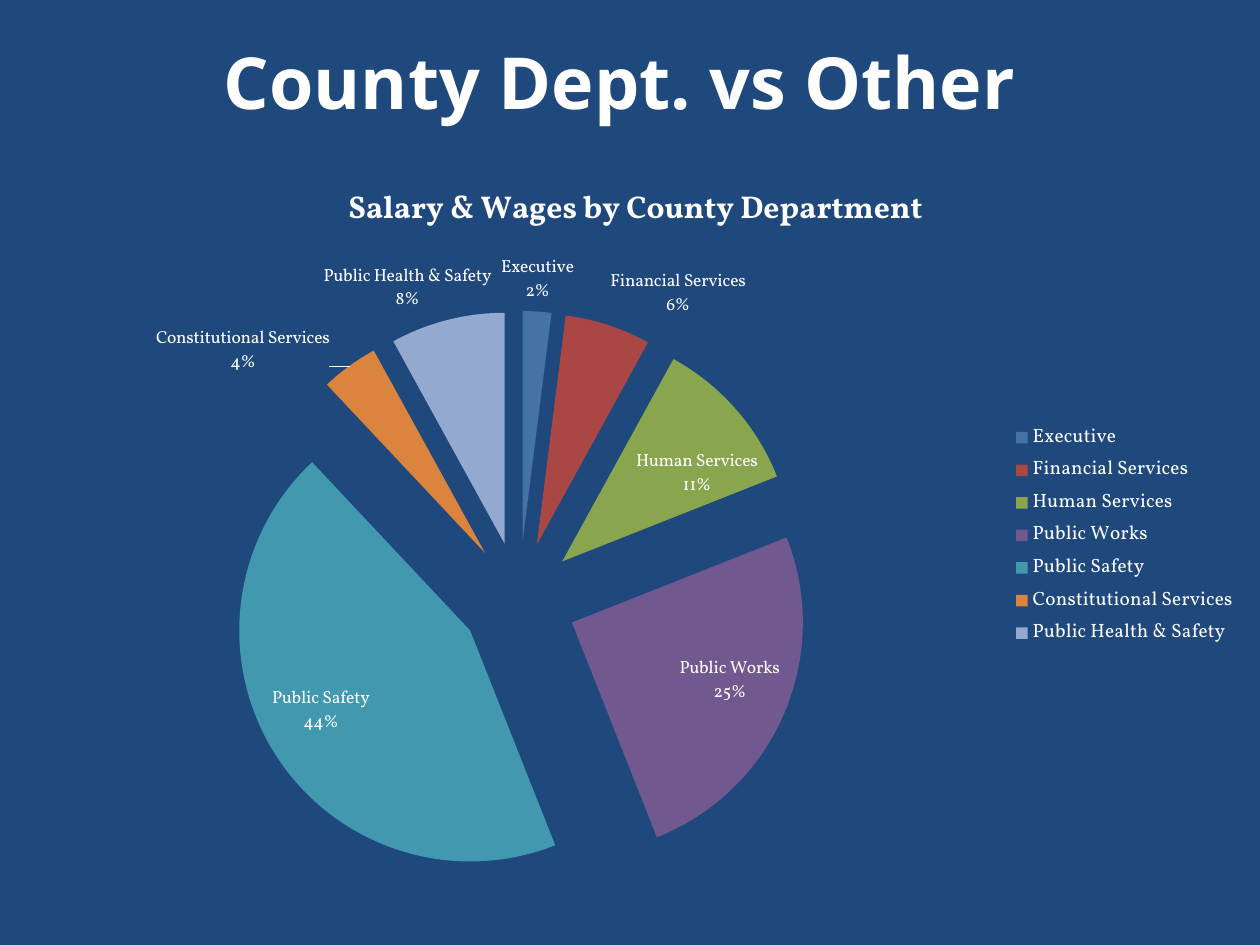
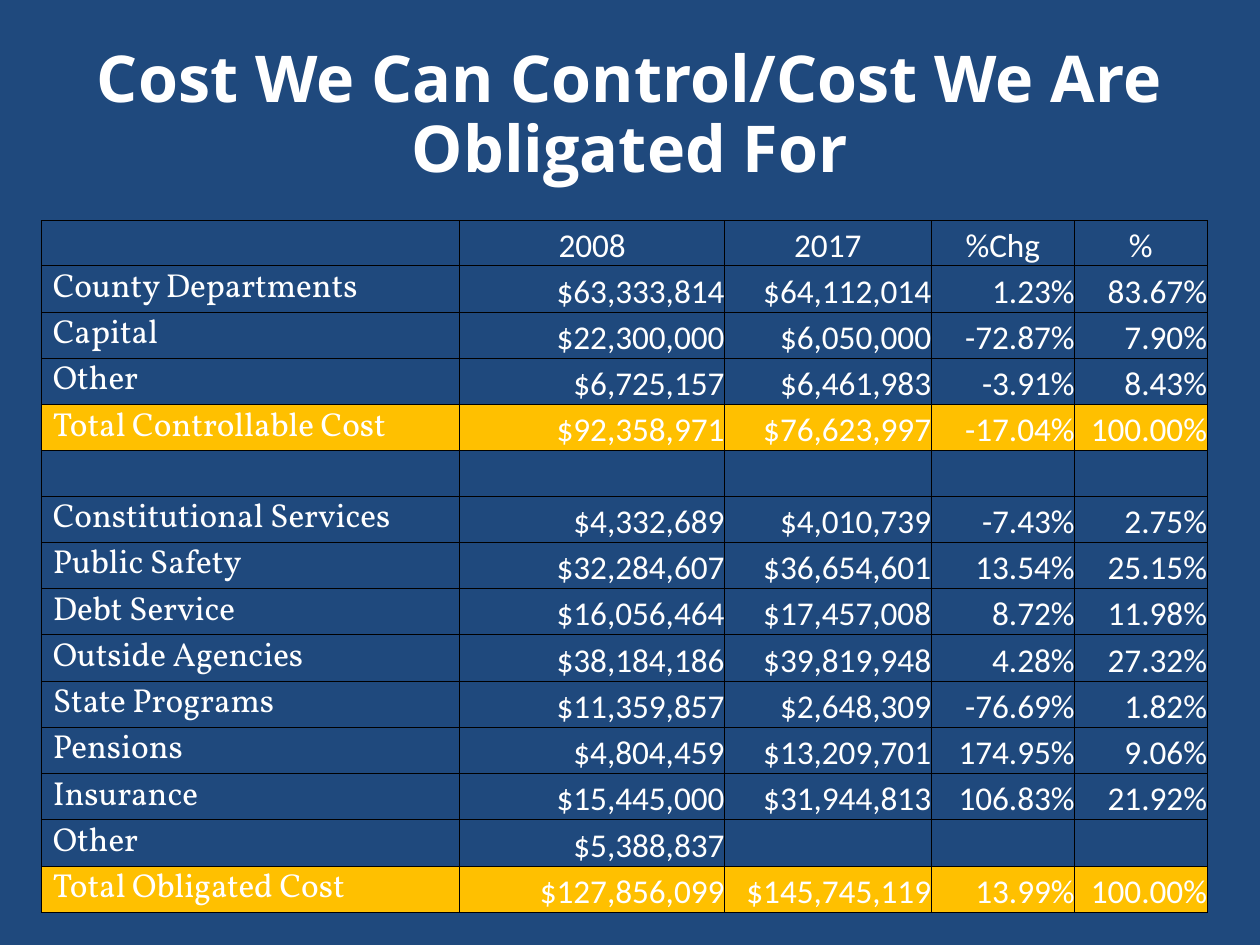
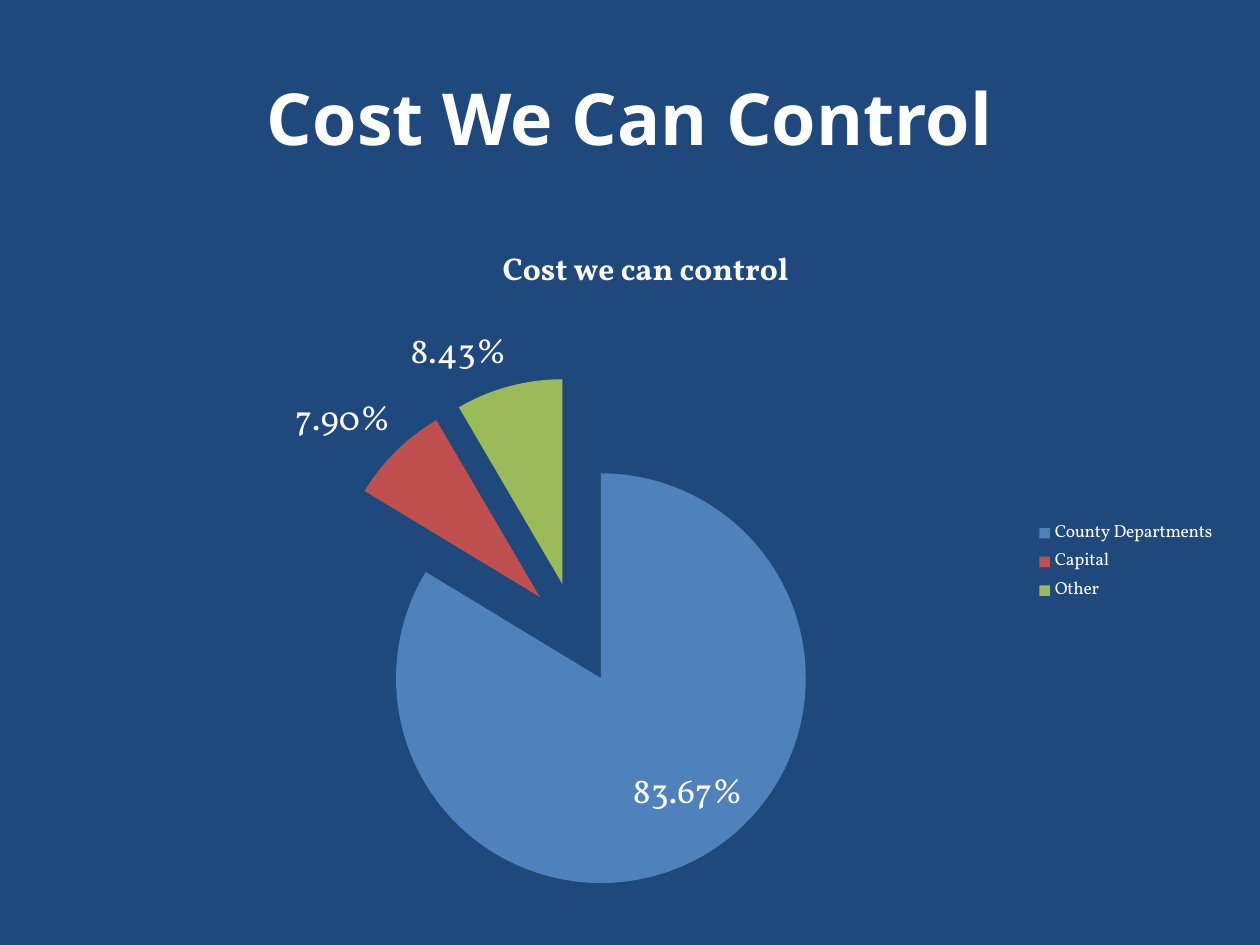
"""Build three slides on county department costs: two exploded pies and a table."""
from dataclasses import dataclass

from lxml import etree
from pptx import Presentation
from pptx.chart.data import CategoryChartData
from pptx.dml.color import RGBColor
from pptx.enum.chart import XL_CHART_TYPE, XL_LABEL_POSITION, XL_LEGEND_POSITION
from pptx.enum.dml import MSO_LINE
from pptx.enum.text import MSO_ANCHOR, MSO_AUTO_SIZE, PP_ALIGN
from pptx.oxml import parse_xml
from pptx.oxml.ns import nsdecls, qn
from pptx.util import Pt

PIE = XL_CHART_TYPE.PIE
BEST_FIT = XL_LABEL_POSITION.BEST_FIT
LEGEND_RIGHT = XL_LEGEND_POSITION.RIGHT
SOLID = MSO_LINE.SOLID
MIDDLE, BOTTOM = MSO_ANCHOR.MIDDLE, MSO_ANCHOR.BOTTOM
LEFT, CENTER, RIGHT = PP_ALIGN.LEFT, PP_ALIGN.CENTER, PP_ALIGN.RIGHT
NO_AUTOFIT = MSO_AUTO_SIZE.NONE

EMU_PER_PX = 9144
TITLE_ONLY = 5
EXPLOSION = 25

NAVY = RGBColor(0x1F, 0x49, 0x7D)
WHITE = RGBColor(0xFF, 0xFF, 0xFF)
GOLD = RGBColor(0xFF, 0xC0, 0x00)
BORDER_COLOR = RGBColor(0x00, 0x00, 0x00)
DEPARTMENT_COLORS = (
    RGBColor(0x45, 0x72, 0xA7),
    RGBColor(0xAA, 0x46, 0x43),
    RGBColor(0x89, 0xA5, 0x4E),
    RGBColor(0x71, 0x58, 0x8F),
    RGBColor(0x41, 0x98, 0xAF),
    RGBColor(0xDB, 0x84, 0x3D),
    RGBColor(0x93, 0xA9, 0xCF),
)
CONTROL_COLORS = (
    RGBColor(0x4F, 0x81, 0xBD),
    RGBColor(0xC0, 0x50, 0x4D),
    RGBColor(0x9B, 0xBB, 0x59),
)

TITLE_FONT = "Open Sans"
LABEL_FONT = "Vollkorn"
NUMBER_FONT = "Calibri"


@dataclass(frozen=True)
class Box:
    left: int
    top: int
    width: int
    height: int

    def emu(self) -> tuple[int, int, int, int]:
        return px(self.left), px(self.top), px(self.width), px(self.height)


@dataclass(frozen=True)
class PieSpec:
    title: str
    box: Box
    plot: tuple[float, float, float, float]
    slices: dict[str, float]
    colors: tuple[RGBColor, ...]
    number_format: str
    percent_and_name: bool
    label_size: int
    legend_size: int


TITLE_BOX = Box(50, 30, 900, 125)
HIGH_TITLE_BOX = Box(42, 2, 900, 125)

DEPARTMENT_PIE = PieSpec(
    title="Salary & Wages by County Department",
    box=Box(17, 125, 975, 600),
    plot=(0.17, 0.2, 0.47, 0.77),
    slices={
        "Executive": 2,
        "Financial Services": 6,
        "Human Services": 11,
        "Public Works": 25,
        "Public Safety": 44,
        "Constitutional Services": 4,
        "Public Health & Safety": 8,
    },
    colors=DEPARTMENT_COLORS,
    number_format="0%",
    percent_and_name=True,
    label_size=10,
    legend_size=11,
)
CONTROL_PIE = PieSpec(
    title="Cost we can control",
    box=Box(50, 175, 925, 542),
    plot=(0.22, 0.23, 0.44, 0.75),
    slices={"County Departments": 0.8367, "Capital": 0.079, "Other": 0.0843},
    colors=CONTROL_COLORS,
    number_format="0.00%",
    percent_and_name=False,
    label_size=20,
    legend_size=10,
)

COLUMN_WIDTHS = (332, 210, 164, 114, 105)
ROW_HEIGHT = 36
COST_ROWS = (
    ("", "2008", "2017", "%Chg", "%"),
    ("County Departments", "$63,333,814", "$64,112,014", "1.23%", "83.67%"),
    ("Capital", "$22,300,000", "$6,050,000", "-72.87%", "7.90%"),
    ("Other", "$6,725,157", "$6,461,983", "-3.91%", "8.43%"),
    ("Total Controllable Cost", "$92,358,971", "$76,623,997", "-17.04%", "100.00%"),
    ("", "", "", "", ""),
    ("Constitutional Services", "$4,332,689", "$4,010,739", "-7.43%", "2.75%"),
    ("Public Safety", "$32,284,607", "$36,654,601", "13.54%", "25.15%"),
    ("Debt Service", "$16,056,464", "$17,457,008", "8.72%", "11.98%"),
    ("Outside Agencies", "$38,184,186", "$39,819,948", "4.28%", "27.32%"),
    ("State Programs", "$11,359,857", "$2,648,309", "-76.69%", "1.82%"),
    ("Pensions", "$4,804,459", "$13,209,701", "174.95%", "9.06%"),
    ("Insurance", "$15,445,000", "$31,944,813", "106.83%", "21.92%"),
    ("Other", "$5,388,837", "", "", ""),
    ("Total Obligated Cost", "$127,856,099", "$145,745,119", "13.99%", "100.00%"),
)


def px(length: int) -> int:
    return length * EMU_PER_PX


def style_font(font, name: str, size: float, bold: bool = False) -> None:
    font.name = name
    font.size = Pt(size)
    font.bold = bold
    font.color.rgb = WHITE


def add_titled_slide(presentation, text: str, box: Box = TITLE_BOX,
                     size: float = 41, line_spacing: float = 1.0):
    slide = presentation.slides.add_slide(presentation.slide_layouts[TITLE_ONLY])
    title = slide.shapes.title
    title.left, title.top, title.width, title.height = box.emu()
    text_frame = title.text_frame
    text_frame.text = text
    text_frame.auto_size = NO_AUTOFIT
    text_frame.vertical_anchor = MIDDLE
    paragraph = text_frame.paragraphs[0]
    paragraph.alignment = CENTER
    paragraph.line_spacing = line_spacing
    style_font(paragraph.runs[0].font, TITLE_FONT, size, bold=True)
    return slide


def place_plot(chart, plot: tuple[float, float, float, float]) -> None:
    plot_area = chart.element.find(".//" + qn("c:plotArea"))
    for layout in plot_area.findall(qn("c:layout")):
        plot_area.remove(layout)
    sizes = "".join(f'<c:{tag} val="{value}"/>' for tag, value in zip("xywh", plot))
    plot_area.insert(0, parse_xml(
        f'<c:layout {nsdecls("c")}><c:manualLayout><c:layoutTarget val="inner"/>'
        f'<c:xMode val="edge"/><c:yMode val="edge"/>{sizes}'
        "</c:manualLayout></c:layout>"))


def explode_slices(chart) -> None:
    series_name = chart.element.find(".//" + qn("c:ser")).find(qn("c:tx"))
    explosion = etree.Element(qn("c:explosion"), val=str(EXPLOSION))
    series_name.addnext(explosion)


def add_pie(slide, spec: PieSpec) -> None:
    chart_data = CategoryChartData()
    chart_data.categories = list(spec.slices)
    chart_data.add_series(spec.title, list(spec.slices.values()))
    chart = slide.shapes.add_chart(PIE, *spec.box.emu(), chart_data).chart
    style_font(chart.font, LABEL_FONT, 10)

    chart.has_title = True
    title_frame = chart.chart_title.text_frame
    title_frame.text = spec.title
    style_font(title_frame.paragraphs[0].runs[0].font, LABEL_FONT, 18, bold=True)
    chart.chart_title.include_in_layout = False

    chart.has_legend = True
    chart.legend.position = LEGEND_RIGHT
    chart.legend.include_in_layout = False
    style_font(chart.legend.font, LABEL_FONT, spec.legend_size)

    place_plot(chart, spec.plot)
    explode_slices(chart)
    plot = chart.plots[0]
    plot.vary_by_categories = True
    for index, color in enumerate(spec.colors):
        point_format = plot.series[0].points[index].format
        point_format.fill.solid()
        point_format.fill.fore_color.rgb = color
        point_format.line.fill.background()

    plot.has_data_labels = True
    labels = plot.data_labels
    style_font(labels.font, LABEL_FONT, spec.label_size)
    labels.number_format = spec.number_format
    labels.number_format_is_linked = False
    labels.show_percentage = spec.percent_and_name
    labels.show_category_name = spec.percent_and_name
    labels.show_value = not spec.percent_and_name
    labels.position = BEST_FIT


def add_borders(cell) -> None:
    properties = cell._tc.get_or_add_tcPr()
    for index, side in enumerate(("lnL", "lnR", "lnT", "lnB")):
        properties.insert(index, parse_xml(
            f'<a:{side} {nsdecls("a")} w="{Pt(0.5)}"><a:solidFill>'
            f'<a:srgbClr val="{BORDER_COLOR}"/></a:solidFill>'
            f'<a:prstDash val="{"solid" if SOLID else ""}"/></a:{side}>'))


def format_cell(cell, text: str, is_label: bool, is_header: bool, is_total: bool) -> None:
    cell.margin_left = px(9) if is_label else 0
    cell.margin_right = cell.margin_top = cell.margin_bottom = 0
    cell.vertical_anchor = MIDDLE if is_label else BOTTOM
    if is_total:
        cell.fill.solid()
        cell.fill.fore_color.rgb = GOLD
    else:
        cell.fill.background()
    add_borders(cell)
    if text:
        cell.text_frame.text = text
        paragraph = cell.text_frame.paragraphs[0]
        paragraph.alignment = LEFT if is_label else CENTER if is_header else RIGHT
        style_font(paragraph.runs[0].font, LABEL_FONT if is_label else NUMBER_FONT, 19)


def add_cost_table(slide) -> None:
    box = Box(33, 175, sum(COLUMN_WIDTHS), ROW_HEIGHT * len(COST_ROWS))
    table = slide.shapes.add_table(len(COST_ROWS), len(COLUMN_WIDTHS), *box.emu()).table
    table.first_row = False
    table.horz_banding = False
    for column, width in zip(table.columns, COLUMN_WIDTHS):
        column.width = px(width)
    for row_index, values in enumerate(COST_ROWS):
        is_total = values[0].startswith("Total")
        for column_index, text in enumerate(values):
            format_cell(table.cell(row_index, column_index), text,
                        column_index == 0, row_index == 0, is_total)


def main() -> None:
    presentation = Presentation()
    presentation.slide_width, presentation.slide_height = px(1000), px(750)
    background = presentation.slide_master.background.fill
    background.solid()
    background.fore_color.rgb = NAVY

    slide = add_titled_slide(presentation, "County Dept. vs Other", HIGH_TITLE_BOX)
    add_pie(slide, DEPARTMENT_PIE)

    slide = add_titled_slide(presentation, "Cost We Can Control/Cost We Are Obligated For",
                             size=36.9, line_spacing=0.9)
    add_cost_table(slide)

    slide = add_titled_slide(presentation, "Cost We Can Control")
    add_pie(slide, CONTROL_PIE)

    presentation.save("out.pptx")


if __name__ == "__main__":
    main()
